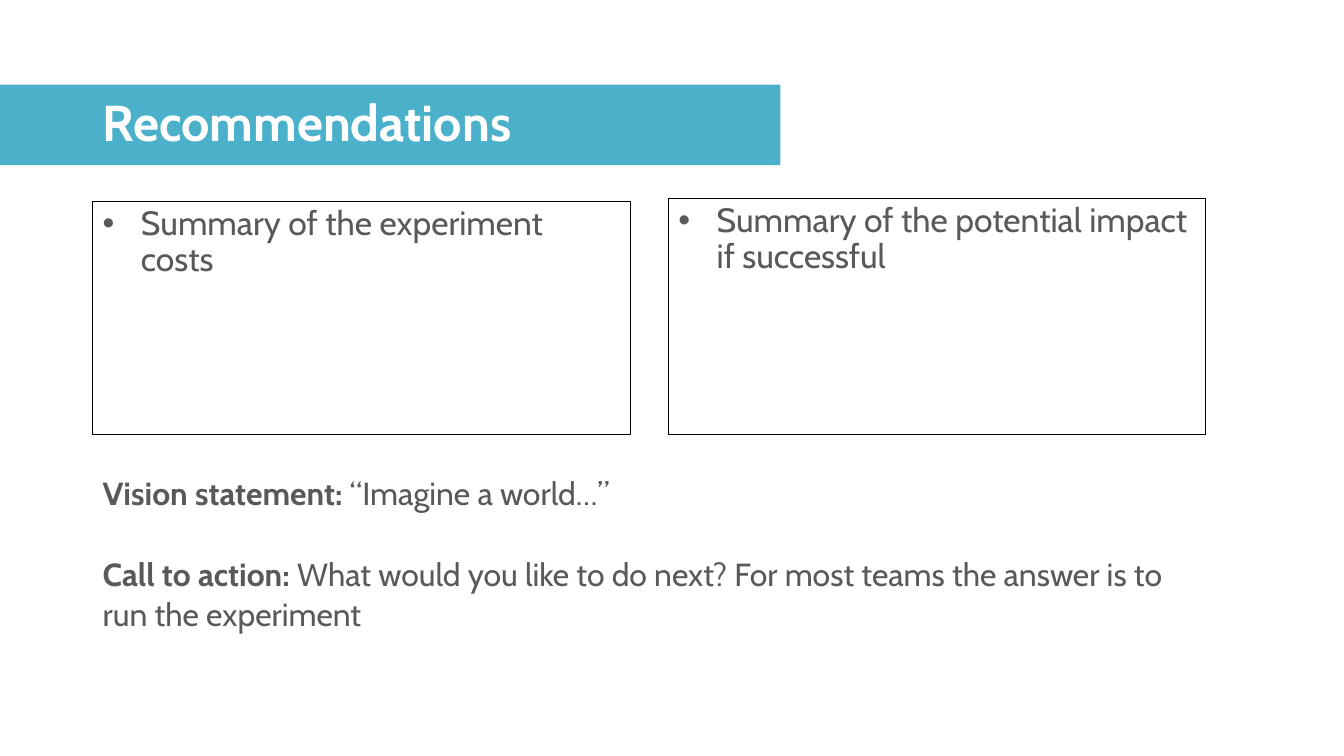
from lxml.etree import SubElement
from pptx import Presentation
from pptx.dml.color import RGBColor
from pptx.enum.shapes import MSO_SHAPE
from pptx.enum.text import MSO_ANCHOR, PP_ALIGN
from pptx.oxml.ns import qn
from pptx.util import Pt

PX = 9144  # 100 px to the inch
GREY = "595959"


def rgb(value):
    return RGBColor.from_string(value)


def write(para, text, color, **formats):
    """Add one styled span of text to a paragraph."""
    span = para.add_run()
    span.text = text
    span.font.color.rgb = rgb(color)
    for name, value in {"name": "Cabin", **formats}.items():
        setattr(span.font, name, value)


deck = Presentation()
deck.slide_width, deck.slide_height = 1333 * PX, 750 * PX
page = deck.slides.add_slide(deck.slide_layouts[6])

# Title band
band = page.shapes.add_shape(MSO_SHAPE.RECTANGLE, 0, 84 * PX, 774 * PX, 80 * PX)
band.shadow.inherit = False
band.fill.solid()
band.fill.fore_color.rgb = rgb("4BB1CA")
band.line.fill.background()

title = page.shapes.add_textbox(92 * PX, 52 * PX, 1150 * PX, 145 * PX).text_frame
title.word_wrap = True
title.vertical_anchor = MSO_ANCHOR.MIDDLE
title.paragraphs[0].line_spacing = 0.9
write(title.paragraphs[0], "Recommendations", "FFFFFF", size=Pt(36), bold=True)

# Two summary boxes sharing one bottom edge
BOTTOM, INDENT = 431, 38
summaries = [
    (92, 200, "Summary of the experiment costs"),
    (663, 197, "Summary of the potential impact if successful"),
]
for left, top, text in summaries:
    box = page.shapes.add_shape(
        MSO_SHAPE.RECTANGLE, left * PX, top * PX, 533 * PX, (BOTTOM - top) * PX)
    box.shadow.inherit = False
    box.fill.background()
    box.line.color.rgb = rgb("000000")
    box.line.width = Pt(0.75)
    box.text_frame.word_wrap = True
    box.text_frame.vertical_anchor = MSO_ANCHOR.TOP
    para = box.text_frame.paragraphs[0]
    para.alignment = PP_ALIGN.LEFT
    para.line_spacing = 0.9
    layout = para._p.get_or_add_pPr()
    layout.set("marL", str(INDENT * PX))
    layout.set("indent", str(-INDENT * PX))
    bullet_color = SubElement(layout, qn("a:buClr"))
    SubElement(bullet_color, qn("a:srgbClr"), val=GREY)
    SubElement(layout, qn("a:buFont"), typeface="Arial")
    SubElement(layout, qn("a:buChar"), char="•")
    write(para, text, GREY, size=Pt(24))

# Closing statements
closing = page.shapes.add_textbox(92 * PX, 463 * PX, 1101 * PX, 168 * PX).text_frame
closing.word_wrap = True
statements = [
    ("Vision statement:", " “Imagine a world…”"),
    ("Call to action:",
     " What would you like to do next? For most teams the answer is to run the experiment"),
]
for index, (label, text) in enumerate(statements):
    para = closing.add_paragraph() if index else closing.paragraphs[0]
    para.line_spacing = 1.05
    if index:
        para.space_before = Pt(29)
    write(para, label, GREY, size=Pt(22.8), bold=True)
    write(para, text, GREY, size=Pt(22.8), bold=False)

deck.save("out.pptx")
